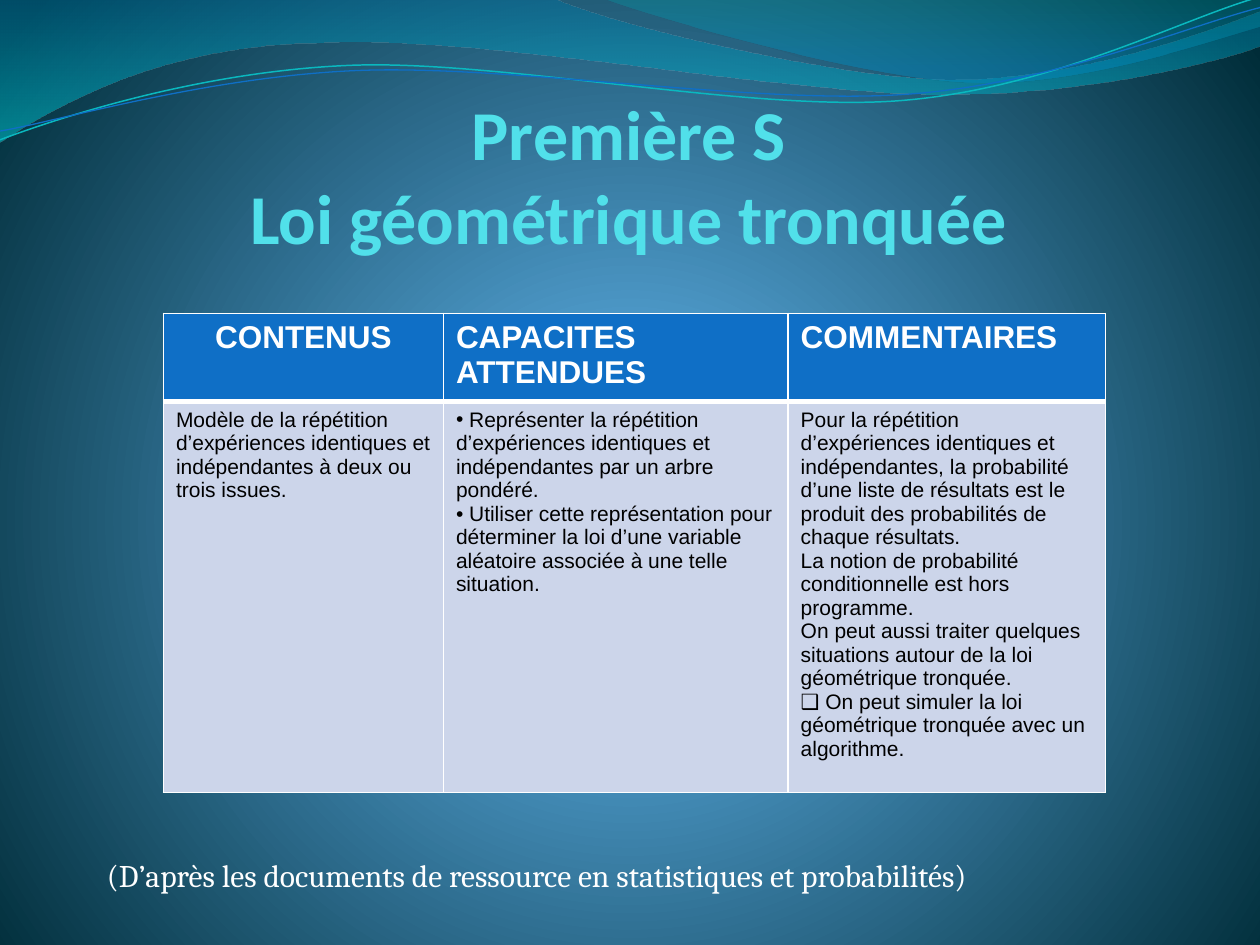
from dataclasses import dataclass

from lxml import etree
from pptx import Presentation
from pptx.dml.color import RGBColor
from pptx.enum import text
from pptx.oxml import ns, parse_xml
from pptx.util import Pt


@dataclass(frozen=True)
class Theme:
    title: str = "51E0EA"
    light: str = "FFFFFF"
    dark: str = "000000"
    header_fill: str = "0F6FC6"
    body_fill: str = "CCD5EA"
    teal_line: str = "0AB8BF"
    blue_line: str = "0F6FC6"
    backdrop: tuple = ((0, "4AA0D6", 100), (25, "4C98C7", 100), (100, "002C38", 100))
    wide_wave: tuple = ((0, "0074A1", 45), (100, "00C6CF", 55))
    right_wave: tuple = ((0, "00A1A9", 30), (80, "008BBF", 45))
    title_size: int = 40
    heading_size: int = 18
    body_size: int = 12
    title_font: str = "Calibri"
    table_font: str = "Arial"
    note_font: str = "Cambria"


THEME = Theme()
CENTRE = text.PP_ALIGN.CENTER
DOWNWARD = '<a:lin ang="5400000" scaled="0"/>'
CIRCLE = '<a:path path="circle"><a:fillToRect l="10000" t="110000" r="10000" b="100000"/></a:path>'

WIDE_WAVE = [(0, -0.7), (316.8, -0.7), (342.7, 12.2, 478.1, 45.4, 545.8, 45.4),
             (614.2, 45.4, 689.8, 18.7, 720, 6.5), (720.7, 25.9),
             (707.8, 31.7, 626.4, 54.7, 537.1, 54), (447.8, 54, 275, 20.2, 185, 24.5),
             (92.9, 25.2, 33.1, 59.8, -0.7, 81.4), (0, -0.7)]
RIGHT_WAVE = [(344.9, -0.7), (366.5, 7.9, 491, 44.6, 553.7, 46.8),
              (616.3, 49.7, 691.9, 23, 720, 15.1), (720, 0), (344.9, -0.7)]
TEAL_CURVE = [(0, 79.9), (34.6, 67, 113.8, 41, 199.4, 37.4),
              (284.4, 33.8, 427, 64.1, 513.4, 57.6), (599.8, 51.1, 675.4, 10.8, 718.6, -1.4)]
BLUE_CURVE = [(0, 74.9), (33.8, 69.1, 118.1, 43.9, 203.8, 40.3),
              (290.2, 36.7, 429.8, 59.8, 516.2, 54), (601.9, 48.2, 677.5, 15.1, 720, 4.3)]

COLUMN_WIDTHS = (160, 197, 181.5)
ROW_HEIGHT = 29.5
TABLE_HEIGHT = 259
HEADINGS = ("CONTENUS", "CAPACITES ATTENDUES", "COMMENTAIRES")
CONTENTS = (
    [("", "Modèle de la répétition d’expériences identiques et indépendantes à deux ou trois issues.")],
    [("•", " Représenter la répétition d’expériences identiques et indépendantes par un arbre pondéré."),
     ("•", " Utiliser cette représentation pour déterminer la loi d’une variable aléatoire associée "
           "à une telle situation.")],
    [("", "Pour la répétition d’expériences identiques et indépendantes, la probabilité d’une liste "
          "de résultats est le produit des probabilités de chaque résultats."),
     ("", "La notion de probabilité conditionnelle est hors programme."),
     ("", "On peut aussi traiter quelques situations autour de la loi géométrique tronquée."),
     ("❑", " On peut simuler la loi géométrique tronquée avec un algorithme.")],
)


def set_gradient(fill, element, stops, direction):
    fill.gradient()
    gradient = element.find(".//" + ns.qn("a:gradFill"))
    stop_xml = "".join(
        f'<a:gs pos="{position * 1000}"><a:srgbClr val="{color}">'
        f'<a:alpha val="{opacity * 1000}"/></a:srgbClr></a:gs>'
        for position, color, opacity in stops)
    gradient.getparent().replace(gradient, parse_xml(
        f'<a:gradFill {ns.nsdecls("a")} rotWithShape="1"><a:gsLst>{stop_xml}</a:gsLst>'
        f'{direction}</a:gradFill>'))


def add_curve(slide, segments, close):
    start, *anchors = [(Pt(segment[-2]), Pt(segment[-1])) for segment in segments]
    builder = slide.shapes.build_freeform(*start, scale=1.0)
    builder.add_line_segments(anchors, close=close)
    shape = builder.convert_to_shape()
    shape.shadow.inherit = False
    lines = list(shape.element.iter(ns.qn("a:lnTo")))
    for line, segment in zip(lines, segments[1:]):
        if len(segment) == 6:
            points = "".join(f'<a:pt x="{Pt(x) - shape.left}" y="{Pt(y) - shape.top}"/>'
                             for x, y in zip(segment[::2], segment[1::2]))
            line.getparent().replace(line, parse_xml(
                f'<a:cubicBezTo {ns.nsdecls("a")}>{points}</a:cubicBezTo>'))
    return shape


def add_wave(slide, segments, stops):
    shape = add_curve(slide, segments, close=True)
    set_gradient(shape.fill, shape.element, stops, DOWNWARD)
    shape.line.fill.background()


def add_curved_line(slide, segments, color, width):
    shape = add_curve(slide, segments, close=False)
    shape.fill.background()
    shape.line.color.rgb = RGBColor.from_string(color)
    shape.line.width = Pt(width)


def add_run(paragraph, words, font, size, color, bold=False):
    run = paragraph.add_run()
    run.text = words
    run.font.name = font
    run.font.size = Pt(size)
    run.font.bold = bold
    run.font.color.rgb = RGBColor.from_string(color)


def add_text_box(slide, left, top, width, height):
    frame = slide.shapes.add_textbox(Pt(left), Pt(top), Pt(width), Pt(height)).text_frame
    frame.word_wrap = True
    return frame


def add_title(slide, first_line, second_line):
    frame = add_text_box(slide, 54, 31.7, 612, 115.9)
    frame.margin_left = frame.margin_top = frame.margin_bottom = 0
    frame.margin_right = Pt(1.44)
    frame.vertical_anchor = text.MSO_ANCHOR.BOTTOM
    paragraph = frame.paragraphs[0]
    paragraph.alignment = CENTRE
    style = (THEME.title_font, THEME.title_size, THEME.title, True)
    add_run(paragraph, first_line, *style)
    paragraph.add_line_break()
    add_run(paragraph, second_line, *style)


def set_bullet(paragraph, character):
    properties = paragraph._p.get_or_add_pPr()
    properties.set("marL", "0")
    properties.set("indent", "0")
    etree.SubElement(properties, ns.qn("a:buFont")).set("typeface", THEME.table_font)
    etree.SubElement(properties, ns.qn("a:buChar")).set("char", character)


def style_cell(cell, color, bottom=1):
    cell.fill.solid()
    cell.fill.fore_color.rgb = RGBColor.from_string(color)
    properties = cell._tc.get_or_add_tcPr()
    widths = {"lnL": 1, "lnR": 1, "lnT": 1, "lnB": bottom}
    for index, (side, width) in enumerate(widths.items()):
        properties.insert(index, parse_xml(
            f'<a:{side} {ns.nsdecls("a")} w="{Pt(width)}"><a:solidFill>'
            f'<a:srgbClr val="{THEME.light}"/></a:solidFill></a:{side}>'))


def add_programme_table(slide):
    frame = slide.shapes.add_table(2, len(HEADINGS), Pt(93.4), Pt(179.1),
                                   Pt(sum(COLUMN_WIDTHS)), Pt(TABLE_HEIGHT))
    table = frame.table
    table.horz_banding = False
    for column, width in zip(table.columns, COLUMN_WIDTHS):
        column.width = Pt(width)
    for row in table.rows:
        row.height = Pt(ROW_HEIGHT)
    frame.height = Pt(TABLE_HEIGHT)
    for index, (heading, entries) in enumerate(zip(HEADINGS, CONTENTS)):
        header, body = table.cell(0, index), table.cell(1, index)
        style_cell(header, THEME.header_fill, bottom=3)
        style_cell(body, THEME.body_fill)
        add_run(header.text_frame.paragraphs[0], heading, THEME.table_font,
                THEME.heading_size, THEME.light, True)
        for number, (bullet, words) in enumerate(entries):
            body_text = body.text_frame
            paragraph = body_text.add_paragraph() if number else body_text.paragraphs[0]
            if bullet:
                set_bullet(paragraph, bullet)
            add_run(paragraph, words, THEME.table_font, THEME.body_size, THEME.dark)
    table.cell(0, 0).text_frame.paragraphs[0].alignment = CENTRE


def add_source_note(slide, words):
    frame = add_text_box(slide, 54, 485.6, 544.3, 29)
    add_run(frame.paragraphs[0], words, THEME.note_font, THEME.heading_size, THEME.light)


def main():
    presentation = Presentation()
    presentation.slide_width, presentation.slide_height = Pt(720), Pt(540)
    slide = presentation.slides.add_slide(presentation.slide_layouts[6])
    set_gradient(slide.background.fill, slide.element, THEME.backdrop, CIRCLE)
    add_wave(slide, WIDE_WAVE, THEME.wide_wave)
    add_wave(slide, RIGHT_WAVE, THEME.right_wave)
    add_curved_line(slide, TEAL_CURVE, THEME.teal_line, 0.85)
    add_curved_line(slide, BLUE_CURVE, THEME.blue_line, 0.75)
    add_title(slide, "Première S", "Loi géométrique tronquée")
    add_programme_table(slide)
    add_source_note(slide, "(D’après les documents de ressource en statistiques et probabilités)")
    presentation.save("out.pptx")


if __name__ == "__main__":
    main()
